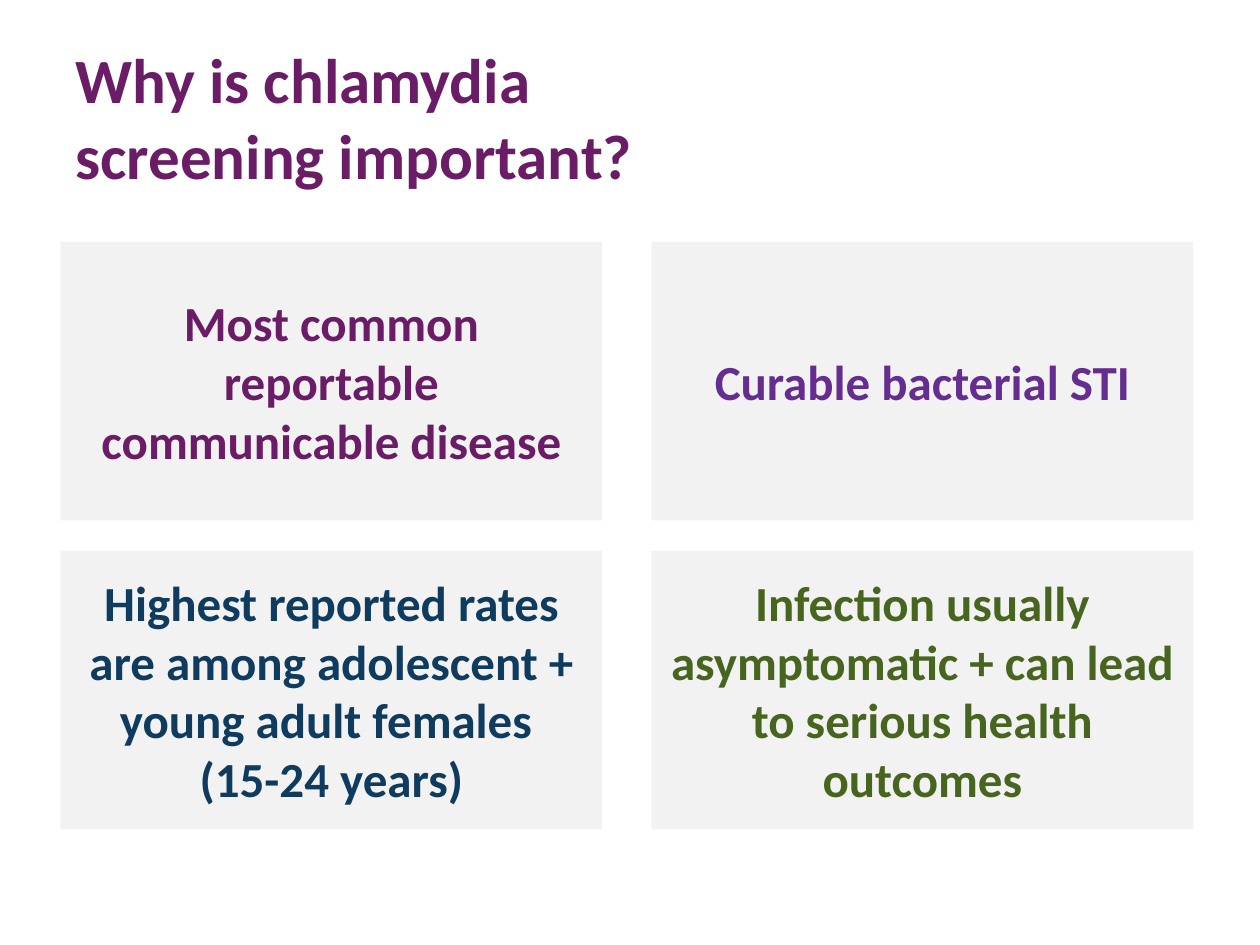
from pptx import Presentation
from pptx.dml.color import RGBColor
from pptx.enum.shapes import MSO_SHAPE
from pptx.enum.text import MSO_ANCHOR, PP_ALIGN
from pptx.util import Inches, Pt

RECTANGLE = MSO_SHAPE.RECTANGLE
MIDDLE = MSO_ANCHOR.MIDDLE
LEFT, CENTER = PP_ALIGN.LEFT, PP_ALIGN.CENTER

PLUM, VIOLET, NAVY, GREEN = "6A1C67", "662D91", "0E3B5E", "47651E"
CARD_GREY = "F2F2F2"

# Boxes are left, top, width, height in inches
TITLE_BOX = (0.5, 0.3, 5.42, 1.25)
REASONS_BOX = (0.48, 1.92, 8.99, 4.66)
COLUMN_GAP, ROW_GAP = 0.39, 0.24

TITLE = "Why is chlamydia screening important?"
REASONS = [
    [("Most common reportable communicable disease", PLUM),
     ("Curable bacterial STI", VIOLET)],
    [("Highest reported rates are among adolescent + young adult females \n"
      "(15-24 years)", NAVY),
     ("Infection usually asymptomatic + can lead to serious health outcomes",
      GREEN)],
]


def rgb(hex_color):
    return RGBColor.from_string(hex_color)


def write(frame, text, size, color, align):
    frame.word_wrap = True
    frame.vertical_anchor = MIDDLE
    frame.text = text
    for paragraph in frame.paragraphs:
        paragraph.alignment = align
        for run in paragraph.runs:
            run.font.name = "Calibri"
            run.font.size = Pt(size)
            run.font.bold = True
            run.font.color.rgb = rgb(color)


def add_title(slide, box):
    heading = slide.shapes.add_textbox(*map(Inches, box))
    write(heading.text_frame, TITLE, 36, PLUM, LEFT)


def add_card(slide, box, text, color):
    card = slide.shapes.add_shape(RECTANGLE, *map(Inches, box))
    card.shadow.inherit = False
    card.fill.solid()
    card.fill.fore_color.rgb = rgb(CARD_GREY)
    card.line.fill.background()
    write(card.text_frame, text, 28, color, CENTER)


def add_reasons(slide, box):
    left, top, width, height = box
    rows, columns = len(REASONS), len(REASONS[0])
    card_width = (width - COLUMN_GAP * (columns - 1)) / columns
    card_height = (height - ROW_GAP * (rows - 1)) / rows
    for row, reasons in enumerate(REASONS):
        for column, (text, color) in enumerate(reasons):
            card_left = left + column * (card_width + COLUMN_GAP)
            card_top = top + row * (card_height + ROW_GAP)
            add_card(slide, (card_left, card_top, card_width, card_height),
                     text, color)


def main():
    deck = Presentation()
    deck.slide_width, deck.slide_height = Inches(10), Inches(7.5)
    slide = deck.slides.add_slide(deck.slide_layouts[6])
    add_title(slide, TITLE_BOX)
    add_reasons(slide, REASONS_BOX)
    deck.save("out.pptx")


if __name__ == "__main__":
    main()
